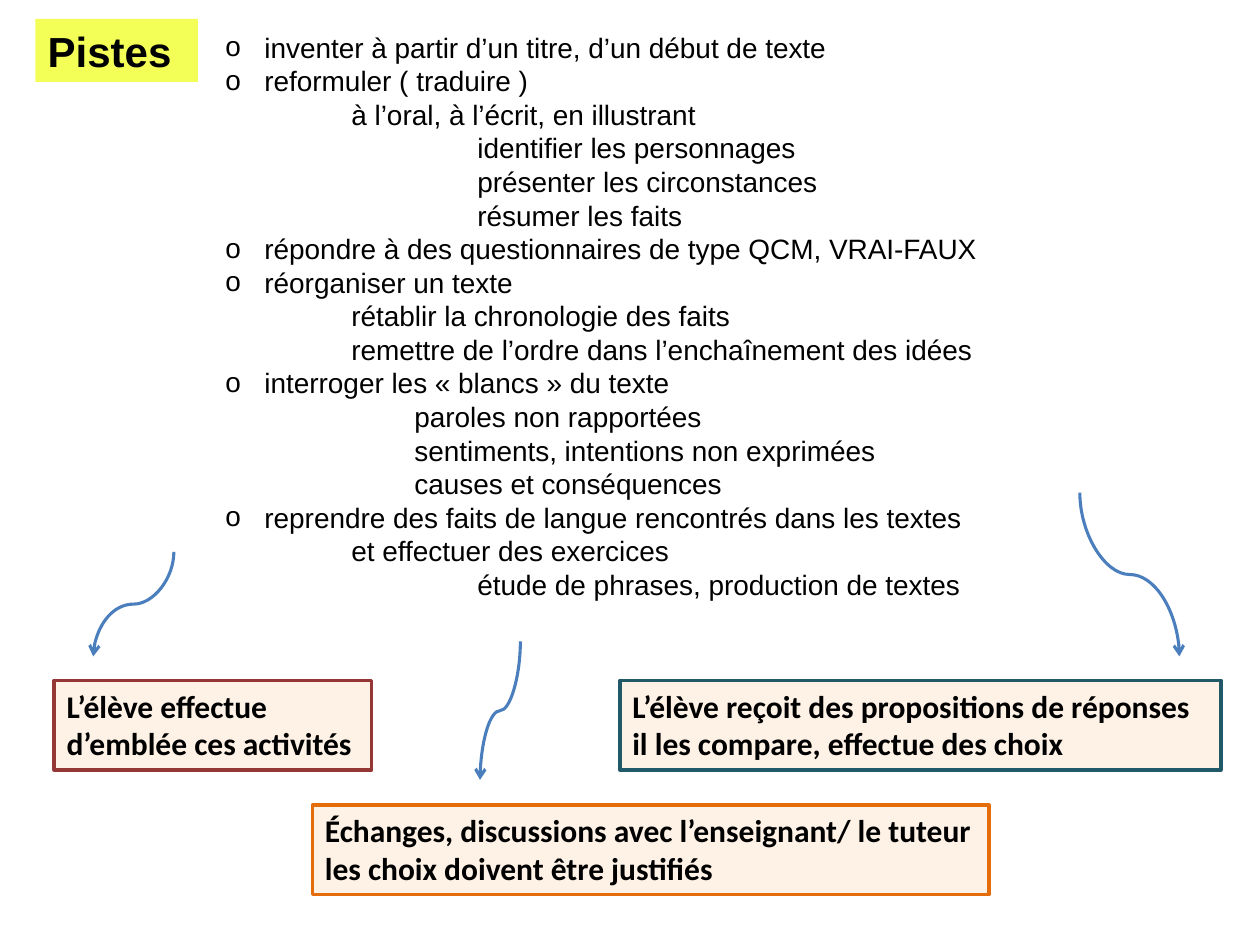
from lxml.etree import SubElement as Sub
from pptx import Presentation
from pptx.dml.color import RGBColor
from pptx.enum.shapes import MSO_CONNECTOR as Link, MSO_SHAPE as Shape
from pptx.enum.text import MSO_ANCHOR as Anchor, MSO_AUTO_SIZE as Fit, PP_ALIGN as Align
from pptx.oxml.ns import qn
from pptx.util import Inches, Pt

BLACK = RGBColor(0x00, 0x00, 0x00)
YELLOW = RGBColor(0xF3, 0xFF, 0x57)
CREAM = RGBColor(0xFE, 0xF1, 0xE6)
RED = RGBColor(0x95, 0x37, 0x35)
TEAL = RGBColor(0x21, 0x59, 0x68)
ORANGE = RGBColor(0xE4, 0x6C, 0x0A)
BLUE = RGBColor(0x4B, 0x7E, 0xBC)

HANG = 0.31
IDEAS = [
    (0, "inventer à partir d’un titre, d’un début de texte"),
    (0, "reformuler ( traduire )"),
    (1, "à l’oral, à l’écrit, en illustrant"),
    (2, "identifier les personnages"),
    (2, "présenter les circonstances"),
    (2, "résumer les faits"),
    (0, "répondre à des questionnaires de type QCM, VRAI-FAUX"),
    (0, "réorganiser un texte"),
    (1, "rétablir la chronologie des faits"),
    (1, "remettre de l’ordre dans l’enchaînement des idées"),
    (0, "interroger les « blancs » du texte"),
    (1.5, "paroles non rapportées"),
    (1.5, "sentiments, intentions non exprimées"),
    (1.5, "causes et conséquences"),
    (0, "reprendre des faits de langue rencontrés dans les textes"),
    (1, "et effectuer des exercices"),
    (2, "étude de phrases, production de textes"),
]
NOTES = [
    ((0.43, 5.4, 2.52, 0.71), RED, "L’élève effectue d’emblée ces activités", True),
    ((4.92, 5.4, 4.77, 0.71), TEAL,
     "L’élève reçoit des propositions de réponses\nil les compare, effectue des choix", True),
    ((2.48, 6.39, 5.37, 0.71), ORANGE,
     "Échanges, discussions avec l’enseignant/ le tuteur\nles choix doivent être justifiés", False),
]
ARROWS = [(1.38, 4.38, 0.74, 5.21), (8.57, 3.91, 9.36, 5.21), (4.13, 5.09, 3.81, 6.19)]


def style(par, face, size, bold=False):
    """Left-align a paragraph and set the font of its runs."""
    par.alignment = Align.LEFT
    for run in par.runs:
        font = run.font
        font.name, font.size, font.bold = face, Pt(size), bold
        font.color.rgb = BLACK


def add_box(slide, box, text, fill, edge, face, size, wrap):
    """Place a filled rectangle with bold text."""
    shape = slide.shapes.add_shape(Shape.RECTANGLE, *map(Inches, box))
    shape.shadow.inherit = False
    shape.fill.solid()
    shape.fill.fore_color.rgb = fill
    if edge is None:
        shape.line.fill.background()
    else:
        shape.line.color.rgb = edge
        shape.line.width = Pt(2)
    frame = shape.text_frame
    frame.text = text
    frame.word_wrap = wrap
    frame.auto_size = Fit.SHAPE_TO_FIT_TEXT
    frame.vertical_anchor = Anchor.TOP
    for par in frame.paragraphs:
        style(par, face, size, True)


def add_ideas(slide, box, ideas):
    """Place the list of ideas, with bullets on the outer level."""
    frame = slide.shapes.add_textbox(*map(Inches, box)).text_frame
    frame.word_wrap = True
    frame.auto_size = Fit.SHAPE_TO_FIT_TEXT
    frame.text = "\n".join(text for _, text in ideas)
    for par, (inset, _) in zip(frame.paragraphs, ideas):
        style(par, "Arial", 16)
        props = par._p.get_or_add_pPr()
        props.set("marL", str(Inches(inset or HANG)))
        props.set("indent", str(0 if inset else -Inches(HANG)))
        if not inset:
            Sub(props, qn("a:buFont"), typeface="Arial")
            Sub(props, qn("a:buChar"), char="o")


def add_arrow(slide, x1, y1, x2, y2):
    """Draw a curved arrow that leaves and arrives vertically."""
    midx, midy = (x1 + x2) / 2, (y1 + y2) / 2
    right = x2 > x1
    half = (y2 - y1) / 2 * (-1 if right else 1)
    rise = abs(x2 - x1) / 2
    ends = (midx - half, midy - rise, midx + half, midy + rise)
    link = slide.shapes.add_connector(Link.CURVE, *map(Inches, ends))
    link.line.color.rgb = BLUE
    link.line.width = Pt(1.75)
    Sub(link.line._get_or_add_ln(), qn("a:tailEnd"), type="arrow")
    props = link._element.spPr
    props.find(qn("a:xfrm")).set("rot", str((270 if right else 90) * 60000))
    Sub(props, qn("a:effectLst"))


def main():
    """Build the slide and save it."""
    prs = Presentation()
    prs.slide_width, prs.slide_height = Inches(10), Inches(7.5)
    slide = prs.slides.add_slide(prs.slide_layouts[6])
    add_box(slide, (0.28, 0.15, 1.29, 0.5), "Pistes", YELLOW, None, "Arial", 24, False)
    add_ideas(slide, (1.69, 0.19, 7.48, 4.68), IDEAS)
    for box, edge, text, wrap in NOTES:
        add_box(slide, box, text, CREAM, edge, "Calibri", 18, wrap)
    for ends in ARROWS:
        add_arrow(slide, *ends)
    prs.save("out.pptx")


if __name__ == "__main__":
    main()
